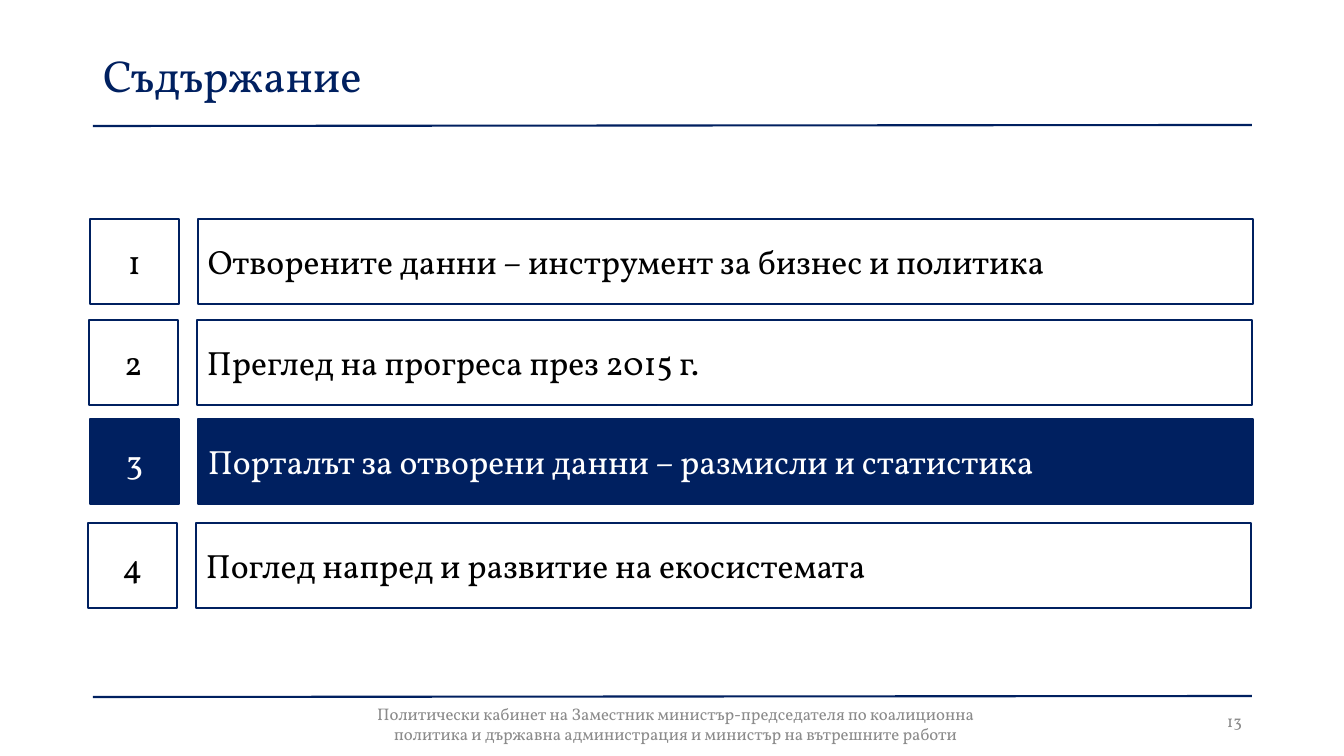
from typing import NamedTuple

from lxml import etree
from pptx import Presentation
from pptx.dml.color import RGBColor
from pptx.enum import shapes, text
from pptx.oxml import ns
from pptx.util import Emu, Pt

NAVY = RGBColor(0x00, 0x20, 0x60)
WHITE = RGBColor(0xFF, 0xFF, 0xFF)
BLACK = RGBColor(0x00, 0x00, 0x00)
GREY = RGBColor(0x8B, 0x8B, 0x8B)
FONT = "Vollkorn"
LEFT, CENTER, RIGHT = text.PP_ALIGN.LEFT, text.PP_ALIGN.CENTER, text.PP_ALIGN.RIGHT

SIDE, HIGH, WIDE = 89, 85, 1055  # number box width, row height, topic width
STEP = 108  # from number box to topic box


class Topic(NamedTuple):
    x: int
    y: int
    label: str
    active: bool = False


TOPICS = [
    Topic(90, 219, "Отворените данни – инструмент за бизнес и политика"),
    Topic(89, 320, "Преглед на прогреса през 2015 г."),
    Topic(90, 419, "Порталът за отворени данни – размисли и статистика", True),
    Topic(88, 523, "Поглед напред и развитие на екосистемата"),
]


def px(n: int) -> Emu:
    return Emu(round(n * 914400 / 100.8))


def write(shape, words: str, *, size: int = 24, color: RGBColor = BLACK,
          align=LEFT) -> None:
    frame = shape.text_frame
    frame.word_wrap = True
    frame.auto_size = text.MSO_AUTO_SIZE.NONE
    frame.vertical_anchor = text.MSO_ANCHOR.MIDDLE
    para = frame.paragraphs[0]
    para.alignment = align
    run = para.add_run()
    run.text = words
    run.font.name = FONT
    run.font.size = Pt(size)
    run.font.color.rgb = color


def rule(slide, y: int) -> None:
    """Draw a slightly rising line across the slide."""
    line = slide.shapes.add_connector(
        shapes.MSO_CONNECTOR.STRAIGHT, px(93), px(y), px(1252), px(y - 1))
    line.line.color.rgb = NAVY
    line.line.width = Pt(1.5)
    etree.SubElement(line._element.spPr, ns.qn("a:effectLst"))


def box(slide, x: int, topic: Topic, width: int, words: str, align) -> None:
    shape = slide.shapes.add_shape(
        shapes.MSO_SHAPE.RECTANGLE, px(x), px(topic.y), px(width), px(HIGH))
    shape.shadow.inherit = False
    shape.fill.solid()
    shape.fill.fore_color.rgb = NAVY if topic.active else WHITE
    shape.line.color.rgb = NAVY
    shape.line.width = Pt(1.5)
    write(shape, words, color=WHITE if topic.active else BLACK, align=align)


def note(slide, x: int, y: int, width: int, words: str, align) -> None:
    """Add a small grey text at the foot of the slide."""
    shape = slide.shapes.add_textbox(px(x), px(y), px(width), px(40))
    write(shape, words, size=12, color=GREY, align=align)


def main() -> None:
    deck = Presentation()
    deck.slide_width, deck.slide_height = px(1344), px(756)
    slide = deck.slides.add_slide(deck.slide_layouts.get_by_name("Title Only"))

    title = slide.shapes.title
    title.left, title.top = px(93), px(40)
    title.width, title.height = px(1159), px(70)
    write(title, "Съдържание", size=32, color=NAVY)

    for y in (126, 697):
        rule(slide, y)

    for number, topic in enumerate(TOPICS, 1):
        box(slide, topic.x + STEP, topic, WIDE, topic.label, LEFT)
        box(slide, topic.x, topic, SIDE, str(number), CENTER)

    note(slide, 950, 701, 302, "13", RIGHT)
    note(slide, 343, 704, 666,
         "Политически кабинет на Заместник министър-председателя по коалиционна "
         "политика и държавна администрация и министър на вътрешните работи", CENTER)

    deck.save("out.pptx")


if __name__ == "__main__":
    main()
